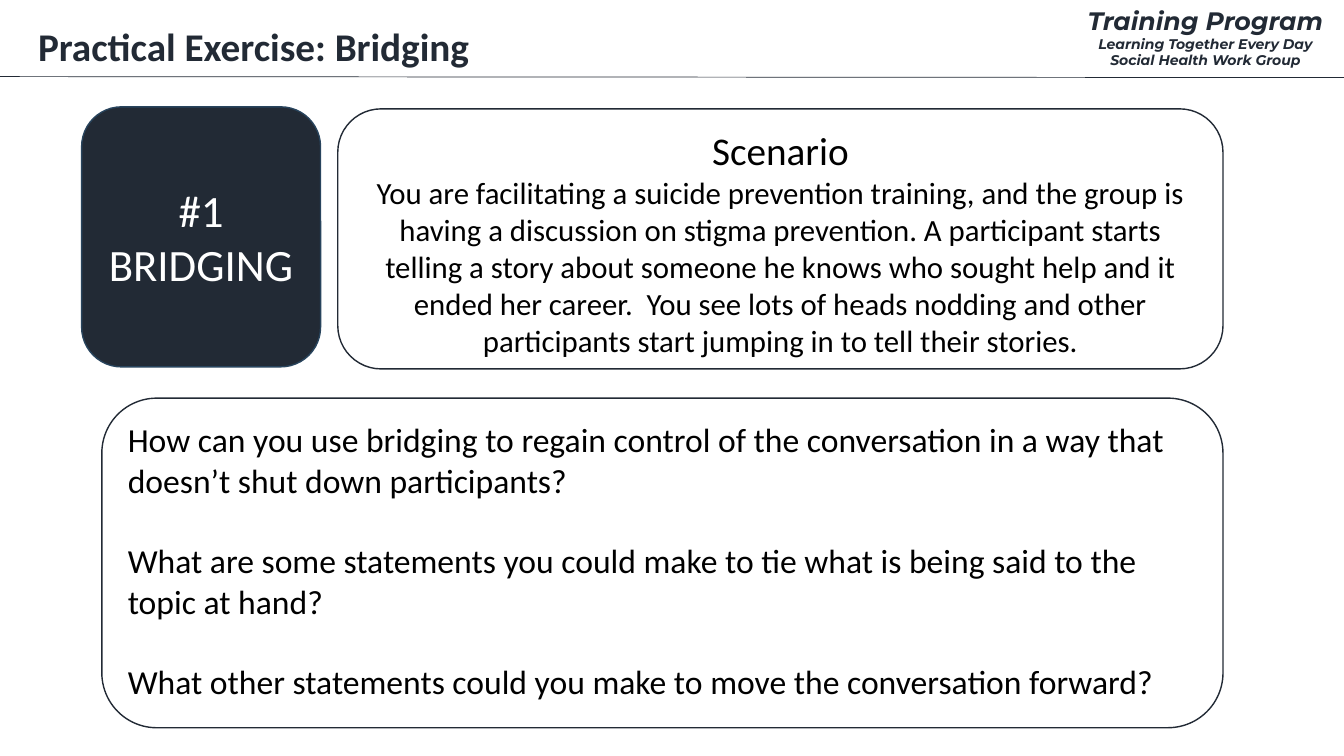
from pptx import Presentation
from pptx.dml.color import RGBColor as Rgb
from pptx.enum.shapes import MSO_CONNECTOR as Connector, MSO_SHAPE as Shape
from pptx.enum.text import MSO_ANCHOR as Anchor, PP_ALIGN as Align
from pptx.oxml.ns import qn
from pptx.util import Inches, Pt
from lxml.etree import SubElement

THEME = {
    "navy": Rgb.from_string("222A35"), "edge": Rgb.from_string("28445D"),
    "white": Rgb.from_string("FFFFFF"), "black": Rgb.from_string("000000"),
    "body": "Calibri", "header": "Montserrat",
    "tag": 10, "program": 18, "story": 22, "question": 24, "heading": 28, "label": 32,
    "rule": 0.5, "outline": 1,
}
WIDTH, HEIGHT = 13.33, 7.5

# Shared edges of the three panels
RIGHT, PANEL_HEIGHT = 12.13, 2.58
SCENARIO_LEFT, QUESTIONS_LEFT = 3.35, 1.01

deck = Presentation()
deck.slide_width, deck.slide_height = Inches(WIDTH), Inches(HEIGHT)
slide = deck.slides.add_slide(deck.slide_layouts[6])


def write(holder, lines, color, align=Align.CENTER, anchor=Anchor.TOP, gap=0, **style):
    """Fill a holder with (text, size) lines, separated by gap points."""
    frame = holder.text_frame
    frame.word_wrap, frame.vertical_anchor = True, anchor
    for index, (text, size) in enumerate(lines):
        line = frame.paragraphs[0] if index == 0 else frame.add_paragraph()
        line.alignment = align
        line.space_before = Pt(gap if index else 0)
        run = line.add_run()
        run.text = text
        run.font.color.rgb = color
        for key, value in {"name": THEME["body"], "size": Pt(size), **style}.items():
            setattr(run.font, key, value)


def panel(left, top, width, height, edge, fill=None):
    """Add a rounded panel with a thin outline."""
    box = slide.shapes.add_shape(
        Shape.ROUNDED_RECTANGLE, *map(Inches, (left, top, width, height)))
    box.shadow.inherit = False
    if fill is None:
        box.fill.background()
    else:
        box.fill.solid()
        box.fill.fore_color.rgb = fill
    box.line.color.rgb, box.line.width = edge, Pt(THEME["outline"])
    return box


# Header: program, title and rule
program = slide.shapes.add_textbox(*map(Inches, (10.58, 0, 2.75, 0.74)))
write(program, [("Training Program", THEME["program"]),
                ("Learning Together Every Day", THEME["tag"]),
                ("Social Health Work Group", THEME["tag"])],
      THEME["navy"], name=THEME["header"], bold=True, italic=True)

title = slide.shapes.add_textbox(*map(Inches, (0.28, 0.17, 10.68, 0.57)))
write(title, [("Practical Exercise: Bridging", THEME["heading"])],
      THEME["navy"], align=Align.LEFT, bold=True)

rule = slide.shapes.add_connector(
    Connector.STRAIGHT, *map(Inches, (0, 0.76, WIDTH, 0.77)))
rule.line.color.rgb, rule.line.width = THEME["navy"], Pt(THEME["rule"])
SubElement(rule.element.spPr, qn("a:effectLst"))

# Exercise label
label = panel(0.81, 1.06, 2.37, PANEL_HEIGHT, THEME["edge"], THEME["navy"])
write(label, [(text, THEME["label"]) for text in ("#1", "BRIDGING")],
      THEME["white"], anchor=Anchor.MIDDLE)

# Scenario
scenario = panel(SCENARIO_LEFT, 1.08, RIGHT - SCENARIO_LEFT, PANEL_HEIGHT, THEME["navy"])
write(scenario, [
    ("Scenario", THEME["heading"]),
    ("You are facilitating a suicide prevention training, and the group is having "
     "a discussion on stigma prevention. A participant starts telling a story about "
     "someone he knows who sought help and it ended her career.  You see lots of "
     "heads nodding and other participants start jumping in to tell their stories.",
     THEME["story"]),
], THEME["black"])

# Questions, one line apart
questions = panel(QUESTIONS_LEFT, 3.95, RIGHT - QUESTIONS_LEFT, 3.27, THEME["navy"])
write(questions, [(text, THEME["question"]) for text in (
    "How can you use bridging to regain control of the conversation in a way that "
    "doesn’t shut down participants?",
    "What are some statements you could make to tie what is being said to the topic at hand?",
    "What other statements could you make to move the conversation forward?",
)], THEME["black"], align=Align.LEFT, gap=1.2 * THEME["question"])

deck.save("out.pptx")
